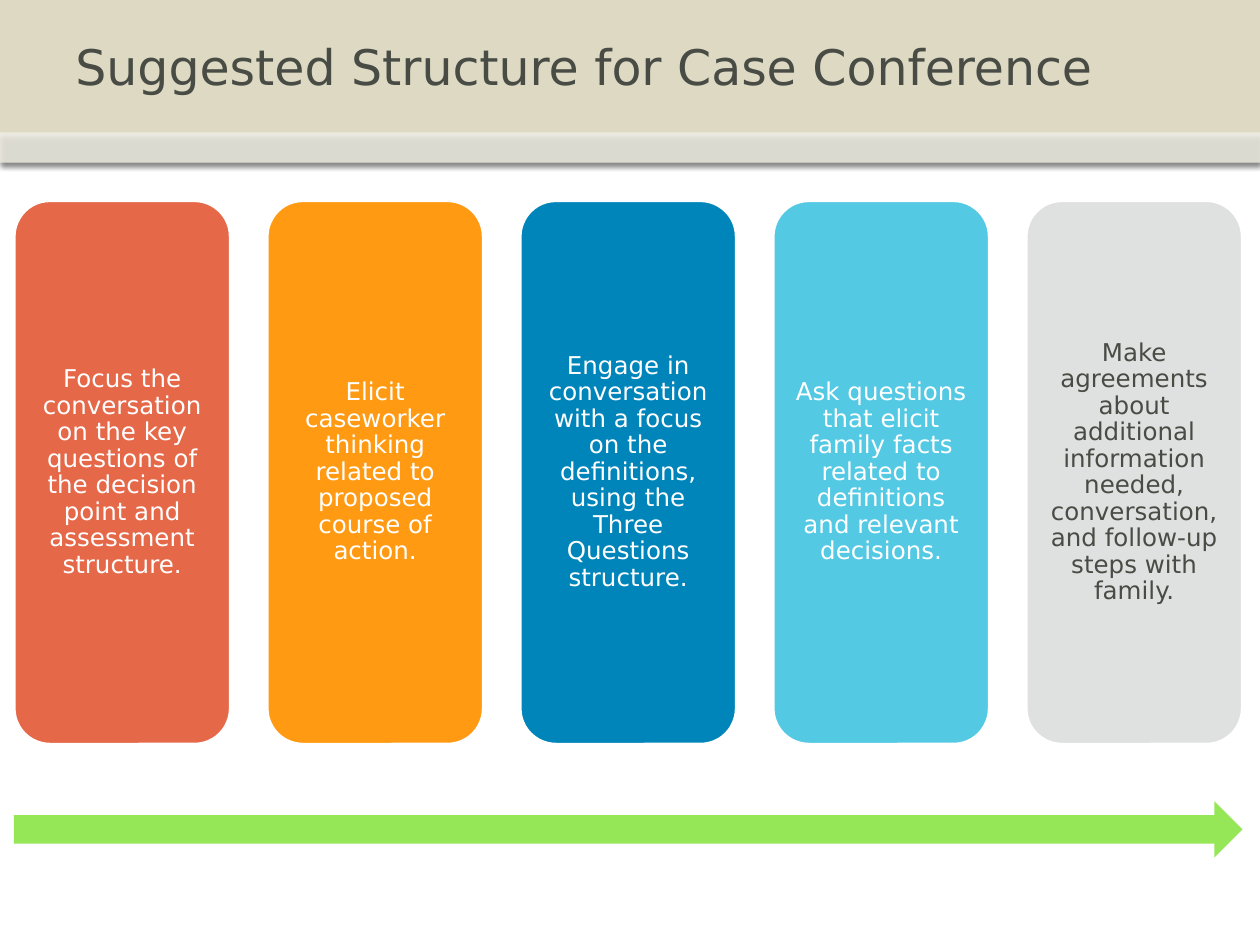
from dataclasses import dataclass

import pptx
import pptx.dml.color
import pptx.enum.shapes
import pptx.enum.text
import pptx.oxml
import pptx.oxml.ns
import pptx.util
from pptx.util import Cm, Pt

SHAPE = pptx.enum.shapes.MSO_SHAPE
ALIGN = pptx.enum.text.PP_ALIGN
MIDDLE = pptx.enum.text.MSO_ANCHOR.MIDDLE
A_NS = pptx.oxml.ns.nsdecls("a")


@dataclass(frozen=True)
class Theme:
    font: str = "DejaVu Sans"
    title_size: int = 28
    card_size: int = 14
    dark: str = "484C45"
    white: str = "FFFFFF"
    band: str = "DDD9C3"
    arrow: str = "96E757"


@dataclass(frozen=True)
class Box:
    """A region of the slide, in centimetres."""
    left: float
    top: float
    width: float
    height: float

    def lengths(self):
        return Cm(self.left), Cm(self.top), Cm(self.width), Cm(self.height)


THEME = Theme()

STEPS = [
    ("Focus the conversation on the key questions of the decision point "
     "and assessment structure.", "E56849", THEME.white),
    ("Elicit caseworker thinking related to proposed course of action.",
     "FF9A12", THEME.white),
    ("Engage in conversation with a focus on the definitions, using the "
     "Three Questions structure.", "0085BA", THEME.white),
    ("Ask questions that elicit family facts related to definitions and "
     "relevant decisions.", "53C9E4", THEME.white),
    ("Make agreements about additional information needed, conversation, "
     "and follow-up steps with family.", "DEE1DF", THEME.dark),
]


def rgb(code):
    return pptx.dml.color.RGBColor.from_string(code)


def add_filled(page, kind, box, color):
    shape = page.shapes.add_shape(kind, *box.lengths())
    shape.shadow.inherit = False
    shape.fill.solid()
    shape.fill.fore_color.rgb = rgb(color)
    shape.line.fill.background()
    return shape


def add_shadow(shape):
    """Give the shape a soft shadow straight below it."""
    effects = shape.element.spPr.find(pptx.oxml.ns.qn("a:effectLst"))
    effects.append(pptx.oxml.parse_xml(
        f'<a:outerShdw {A_NS} blurRad="{Pt(3.1)}" dist="{Pt(1.8)}" '
        'dir="5400000" rotWithShape="0"><a:srgbClr val="000000">'
        '<a:alpha val="35000"/></a:srgbClr></a:outerShdw>'))


def set_opacity(shape, percent):
    color = shape.element.spPr.find(".//" + pptx.oxml.ns.qn("a:srgbClr"))
    color.append(pptx.oxml.parse_xml(
        f'<a:alpha {A_NS} val="{percent * 1000}"/>'))


def write_text(shape, text, size, color, align):
    frame = shape.text_frame
    frame.word_wrap = True
    frame.vertical_anchor = MIDDLE
    para = frame.paragraphs[0]
    para.alignment = align
    span = para.add_run()
    span.text = text
    span.font.name = THEME.font
    span.font.size = Pt(size)
    span.font.color.rgb = rgb(color)
    return para


def add_header(page, box, title):
    strip_height = 0.61
    title_height = box.height - strip_height
    band = add_filled(page, SHAPE.RECTANGLE, box, THEME.band)
    strip_box = Box(box.left, box.top + title_height, box.width, strip_height)
    strip = add_filled(page, SHAPE.RECTANGLE, strip_box, THEME.white)
    set_opacity(strip, 53)
    for shape in (band, strip):
        add_shadow(shape)

    margin = 1.27
    title_box = Box(box.left + margin, box.top,
                    box.width - 2 * margin, title_height)
    heading = page.shapes.add_textbox(*title_box.lengths())
    write_text(heading, title, THEME.title_size, THEME.dark, ALIGN.LEFT)


def add_card(page, box, text, fill, ink):
    card = add_filled(page, SHAPE.ROUNDED_RECTANGLE, box, fill)
    card.line.color.rgb = rgb(THEME.white)
    card.line.width = Pt(2)
    frame = card.text_frame
    frame.margin_left = frame.margin_right = Cm(0.15)
    frame.margin_top = frame.margin_bottom = Cm(0.15)
    para = write_text(card, text, THEME.card_size, ink, ALIGN.CENTER)
    para.line_spacing = 0.9


def add_cards(page, box, steps):
    """Spread the cards evenly over the width of the box."""
    card_width = 4.37
    pitch = (box.width - card_width) / (len(steps) - 1)
    for index, (text, fill, ink) in enumerate(steps):
        card_box = Box(box.left + index * pitch, box.top,
                       card_width, box.height)
        add_card(page, card_box, text, fill, ink)


def main():
    deck = pptx.Presentation()
    deck.slide_width, deck.slide_height = Cm(25.4), Cm(19.05)
    page = deck.slides.add_slide(deck.slide_layouts[6])
    add_header(page, Box(0, 0, 25.4, 3.28),
               "Suggested Structure for Case Conference")
    add_cards(page, Box(0.28, 4.04, 24.77, 10.97), STEPS)
    add_filled(page, SHAPE.RIGHT_ARROW, Box(0.28, 16.15, 24.77, 1.14),
               THEME.arrow)
    deck.save("out.pptx")


if __name__ == "__main__":
    main()
